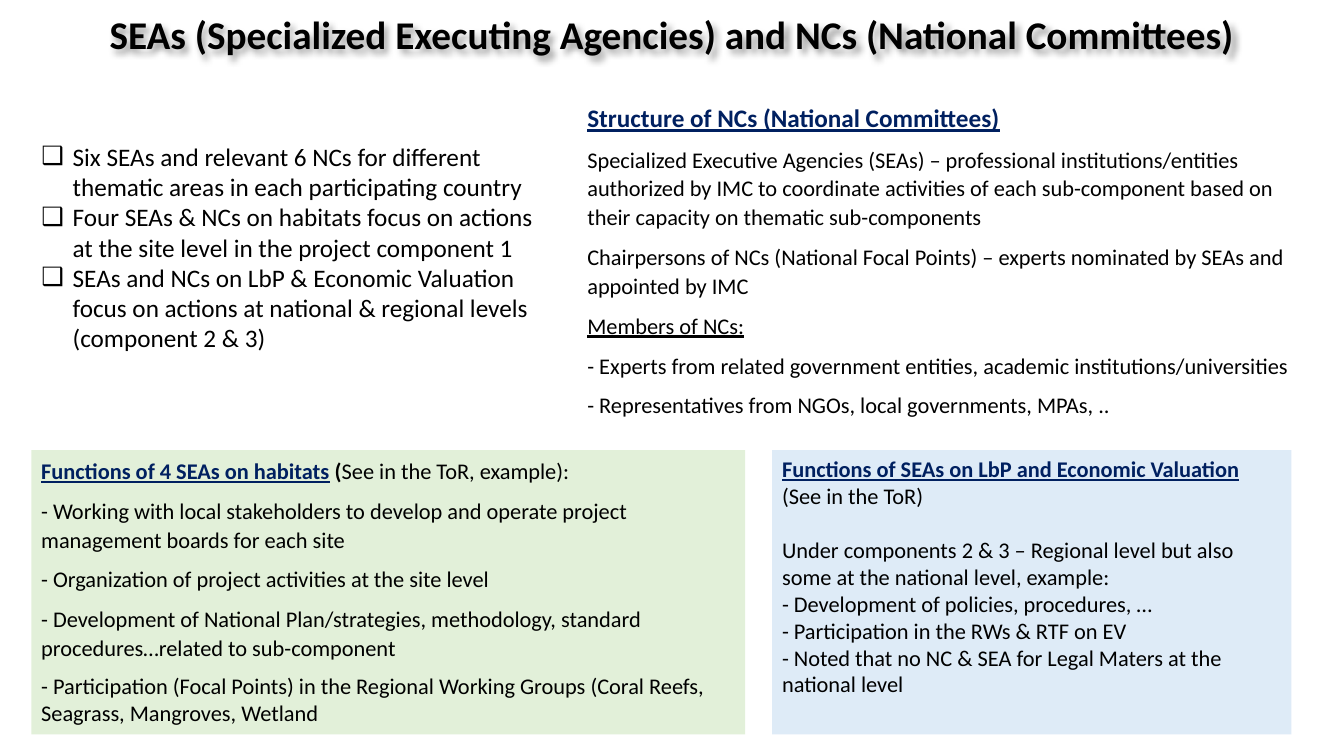
from lxml import etree
from pptx import Presentation
from pptx.dml.color import RGBColor
from pptx.enum.shapes import MSO_SHAPE
from pptx.enum.text import MSO_ANCHOR, MSO_AUTO_SIZE, PP_ALIGN
from pptx.oxml import parse_xml
from pptx.oxml.ns import nsdecls, qn
from pptx.util import Inches, Pt

SLIDE_WIDTH, SLIDE_HEIGHT = Inches(13.33), Inches(7.5)
FONT = "Calibri"
BLACK = RGBColor(0x00, 0x00, 0x00)
NAVY = RGBColor(0x00, 0x20, 0x60)
GREEN = RGBColor(0xE2, 0xF0, 0xD9)
BLUE = RGBColor(0xDE, 0xEB, 0xF7)
SKY = RGBColor(0x72, 0xD3, 0xF7)
STEEL = RGBColor(0xAB, 0xC0, 0xE4)
PALE = RGBColor(0xC7, 0xD5, 0xED)

# Position, colour and opacity in percent
TITLE_GRADIENT = [(0, SKY, 100), (38, STEEL, 100), (66, STEEL, 56), (100, PALE, 100)]

# Left, top, width and height in percent of the slide
TITLE_AREA = (-0.08, 0.53, 100.08, 8)
LIST_AREA = (2.33, 18, 38.33, 29.6)
STRUCTURE_AREA = (42.95, 12.6, 54.76, 44.67)
HABITATS_AREA = (2.33, 59.55, 53.11, 37.6)
VALUATION_AREA = (57.45, 59.55, 38.63, 37.6)

HEADING = {"color": NAVY, "bold": True, "underline": True}

TITLE = "SEAs (Specialized Executing Agencies) and NCs (National Committees)"
OVERVIEW = [
    "Six SEAs and relevant 6 NCs for different thematic areas in each participating country",
    "Four SEAs & NCs on habitats focus on actions at the site level in the project component 1",
    "SEAs and NCs on LbP & Economic Valuation focus on actions at national & regional levels "
    "(component 2 & 3)",
]
STRUCTURE = [
    [("Structure of NCs (National Committees)", {**HEADING, "size": 18})],
    "Specialized Executive Agencies (SEAs) – professional institutions/entities authorized by IMC "
    "to coordinate activities of each sub-component based on their capacity on thematic "
    "sub-components",
    "Chairpersons of NCs (National Focal Points) – experts nominated by SEAs and appointed by IMC",
    [("Members of NCs:", {"underline": True})],
    "- Experts from related government entities, academic institutions/universities",
    "- Representatives from NGOs, local governments, MPAs, ..",
]
HABITATS = [
    [("Functions of 4 SEAs on habitats", HEADING), (" (", {"bold": True}),
     ("See in the ToR, example):", {})],
    "- Working with local stakeholders to develop and operate project management boards "
    "for each site",
    "- Organization of project activities at the site level",
    "- Development of National Plan/strategies, methodology, standard procedures…related to "
    "sub-component",
    "- Participation (Focal Points) in the Regional Working Groups (Coral Reefs, Seagrass, "
    "Mangroves, Wetland",
]
VALUATION = [
    [("Functions of SEAs on LbP and Economic Valuation ", HEADING), ("(See in the ToR)", {})],
    "Under components 2 & 3 – Regional level but also some at the national level, example:",
    "- Development of policies, procedures, …",
    "- Participation in the RWs & RTF on EV",
    "- Noted that no NC & SEA for Legal Maters at the national level",
]


def share(area):
    """Turn percentages of the slide into left, top, width and height."""
    sides = (SLIDE_WIDTH, SLIDE_HEIGHT) * 2
    return [round(side * percent / 100) for side, percent in zip(sides, area)]


def place(shape, area):
    shape.left, shape.top, shape.width, shape.height = share(area)


def format_run(run, size=16, color=BLACK, bold=False, underline=False):
    font = run.font
    font.name, font.size = FONT, Pt(size)
    font.bold, font.underline = bold, underline
    font.color.rgb = color


def write(shape, items, size=16, line_spacing=1.0, space_after=0):
    """Fill a shape with paragraphs; an item is a text or a list of (text, style) runs."""
    frame = shape.text_frame
    frame.word_wrap = True
    frame.auto_size = MSO_AUTO_SIZE.NONE
    frame.vertical_anchor = MSO_ANCHOR.TOP
    for index, item in enumerate(items):
        paragraph = frame.add_paragraph() if index else frame.paragraphs[0]
        paragraph.alignment = PP_ALIGN.LEFT
        paragraph.line_spacing = line_spacing
        paragraph.space_before, paragraph.space_after = Pt(0), Pt(space_after)
        for text, style in [(item, {})] if isinstance(item, str) else item:
            run = paragraph.add_run()
            run.text = text
            format_run(run, **{"size": size, **style})


def set_bullets(shape, character=None, indent=0):
    """Give every paragraph a hanging bullet, or none without a character."""
    for paragraph in shape.text_frame.paragraphs:
        properties = paragraph._p.get_or_add_pPr()
        properties.set("marL", str(Inches(indent)))
        properties.set("indent", str(-Inches(indent)))
        bullet = etree.SubElement(properties, qn("a:buChar" if character else "a:buNone"))
        if character:
            bullet.set("char", character)


def add_gradient(shape, stops):
    """Fill from top to bottom with partly transparent stops."""
    stop_xml = "".join(
        f'<a:gs pos="{position * 1000}"><a:srgbClr val="{color}">'
        f'<a:alpha val="{opacity * 1000}"/></a:srgbClr></a:gs>'
        for position, color, opacity in stops)
    shape._element.spPr.append(parse_xml(
        f'<a:gradFill {nsdecls("a")} rotWithShape="1"><a:gsLst>{stop_xml}</a:gsLst>'
        '<a:lin ang="5400000" scaled="0"/></a:gradFill>'))


def add_shadow(shape):
    shape._element.spPr.append(parse_xml(
        f'<a:effectLst {nsdecls("a")}><a:outerShdw blurRad="{Pt(4)}" dist="{Pt(3)}" '
        'dir="2700000" algn="tl" rotWithShape="0"><a:srgbClr val="000000">'
        '<a:alpha val="40000"/></a:srgbClr></a:outerShdw></a:effectLst>'))


def add_text_panel(slide, area, color, items, **spacing):
    panel = slide.shapes.add_shape(MSO_SHAPE.RECTANGLE, *share(area))
    panel.fill.solid()
    panel.fill.fore_color.rgb = color
    panel.line.fill.background()
    panel.shadow.inherit = False
    write(panel, items, **spacing)
    return panel.text_frame.paragraphs


def set_title(slide):
    title = slide.shapes.title
    place(title, TITLE_AREA)
    add_gradient(title, TITLE_GRADIENT)
    add_shadow(title)
    write(title, [[(TITLE, {"bold": True})]], size=28)
    title.text_frame.vertical_anchor = MSO_ANCHOR.MIDDLE
    title.text_frame.paragraphs[0].alignment = PP_ALIGN.CENTER


def main():
    presentation = Presentation()
    presentation.slide_width, presentation.slide_height = SLIDE_WIDTH, SLIDE_HEIGHT
    slide = presentation.slides.add_slide(presentation.slide_layouts.get_by_name("Two Content"))
    airy = {"line_spacing": 1.07, "space_after": 8}

    set_title(slide)
    overview, structure = slide.placeholders[1], slide.placeholders[2]
    place(overview, LIST_AREA)
    write(overview, OVERVIEW, size=18)
    set_bullets(overview, "❑", 0.31)
    place(structure, STRUCTURE_AREA)
    write(structure, STRUCTURE, **airy)
    set_bullets(structure)

    habitats = add_text_panel(slide, HABITATS_AREA, GREEN, HABITATS, **airy)
    habitats[-1].line_spacing, habitats[-1].space_after = 1.0, Pt(0)
    valuation = add_text_panel(slide, VALUATION_AREA, BLUE, VALUATION)
    valuation[1].space_before = Pt(19.5)

    presentation.save("out.pptx")


if __name__ == "__main__":
    main()
